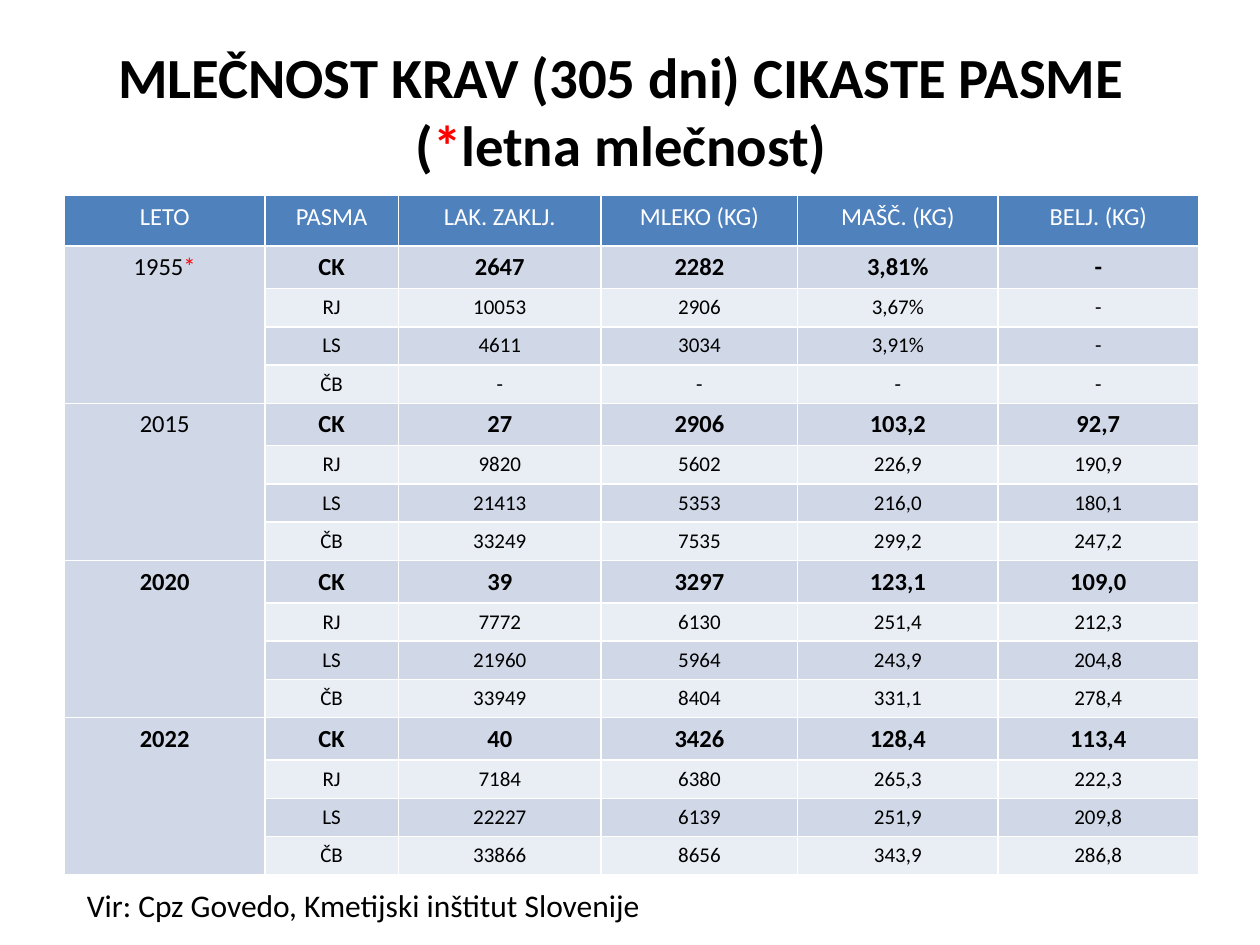
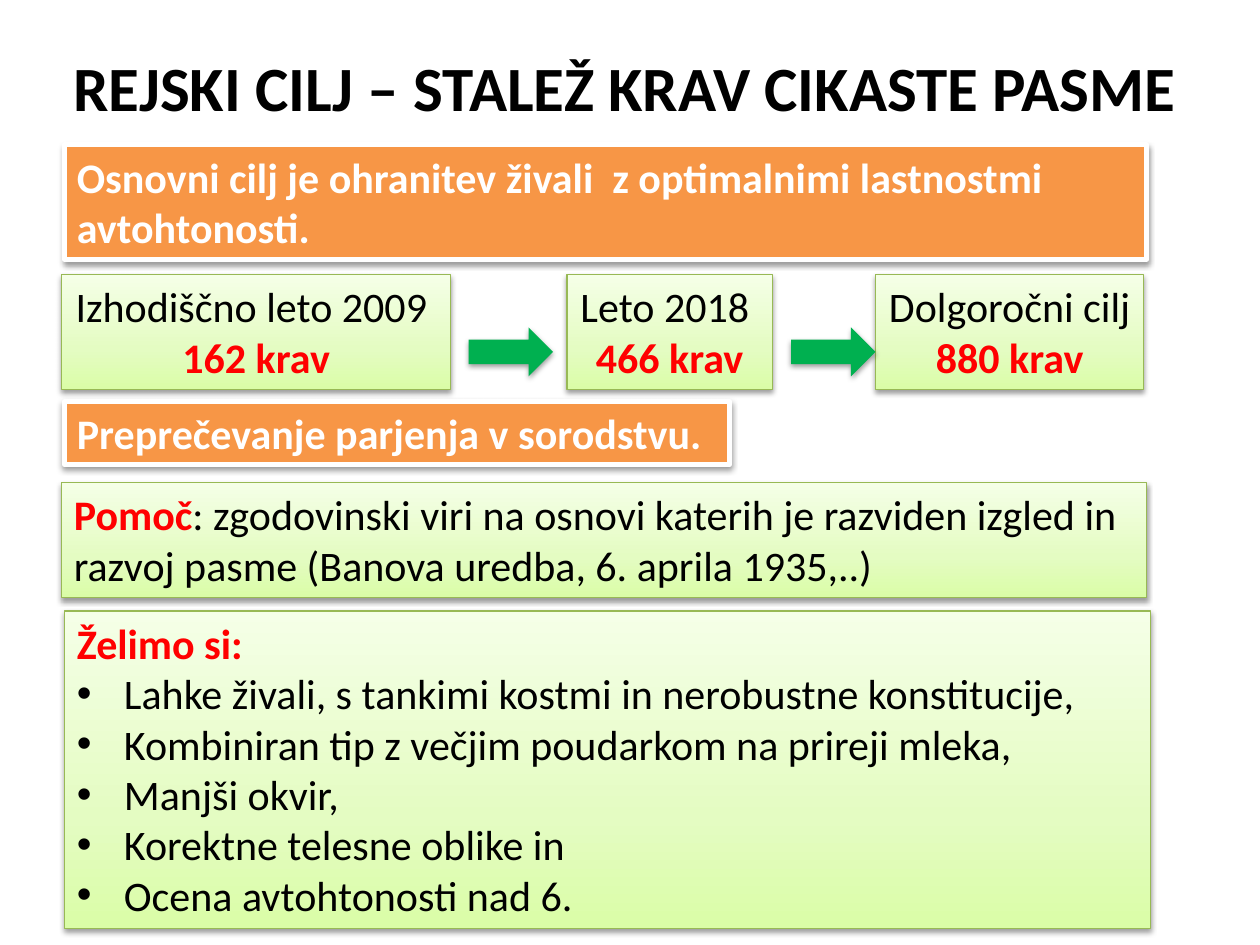
"""Build two slides on the milk yield and breeding goal of Cika cattle."""
from lxml.etree import SubElement
from pptx import Presentation
from pptx.dml.color import RGBColor
from pptx.enum.shapes import MSO_SHAPE as Shape
from pptx.enum.text import MSO_ANCHOR as Anchor, MSO_AUTO_SIZE as AutoSize, PP_ALIGN as Align
from pptx.oxml.ns import qn
from pptx.util import Cm, Pt

FONT = "Calibri"
BLACK, WHITE, RED = "000000", "FFFFFF", "FF0000"
ORANGE, GREEN, GREEN_EDGE = "F79646", "00B050", "98B955"
GREEN_FADE = [(0, "DAFDA7"), (35, "E4FCC2"), (100, "F5FFE7")]
HEADER_BLUE, BAND_DARK, BAND_LIGHT = "4F81BD", "D0D8E8", "E9EDF4"
BODY_SIZE = 24

COLUMNS = [("LETO", 4.04), ("PASMA", 2.69), ("LAK. ZAKLJ.", 4.09),
           ("MLEKO (KG)", 3.96), ("MAŠČ. (KG)", 4.04), ("BELJ. (KG)", 4.04)]
BREEDS = ["CK", "RJ", "LS", "ČB"]
YIELDS = [
    ([("1955", BLACK, False), ("*", RED, False)],
     ["2647 2282 3,81% -", "10053 2906 3,67% -", "4611 3034 3,91% -", "- - - -"]),
    ([("2015", BLACK, False)],
     ["27 2906 103,2 92,7", "9820 5602 226,9 190,9",
      "21413 5353 216,0 180,1", "33249 7535 299,2 247,2"]),
    ([("2020", BLACK, True)],
     ["39 3297 123,1 109,0", "7772 6130 251,4 212,3",
      "21960 5964 243,9 204,8", "33949 8404 331,1 278,4"]),
    ([("2022", BLACK, True)],
     ["40 3426 128,4 113,4", "7184 6380 265,3 222,3",
      "22227 6139 251,9 209,8", "33866 8656 343,9 286,8"]),
]
MILESTONES = [("Izhodiščno leto 2009 ", "162 krav", 1.24, 7.85),
              ("Leto 2018 ", "466 krav", 11.43, 4.14),
              ("Dolgoročni cilj", "880 krav", 17.65, 5.41)]
WISHES = ["Lahke živali, s tankimi kostmi in nerobustne konstitucije, ",
          "Kombiniran tip z večjim poudarkom na prireji mleka,",
          "Manjši okvir, ", "Korektne telesne oblike in", "Ocena avtohtonosti nad 6. "]


def rgb(hex_code):
    """Turn a hex string into a colour."""
    return RGBColor.from_string(hex_code)


def write(paragraph, pieces, size, align=Align.LEFT):
    """Write (text, colour, bold) pieces into a paragraph; None breaks the line."""
    paragraph.alignment = align
    for piece in pieces:
        if piece is None:
            paragraph.add_line_break()
            continue
        run = paragraph.add_run()
        run.text, colour, run.font.bold = piece
        run.font.name = FONT
        run.font.size = Pt(size)
        run.font.color.rgb = rgb(colour)


def add_titled_slide(deck, pieces, box, size, align):
    """Add a title-only slide and format its title."""
    slide = deck.slides.add_slide(deck.slide_layouts[5])
    title = slide.shapes.title
    title.left, title.top, title.width, title.height = map(Cm, box)
    title.text_frame.auto_size = AutoSize.NONE
    title.text_frame.vertical_anchor = Anchor.MIDDLE
    write(title.text_frame.paragraphs[0], pieces, size, align)
    return slide


def fill_cell(cell, pieces, size, colour):
    """Give a table cell its text and fill."""
    cell.fill.solid()
    cell.fill.fore_color.rgb = rgb(colour)
    write(cell.text_frame.paragraphs[0], pieces, size, Align.CENTER)


def add_yield_table(slide):
    """Add the table of yields by year and breed."""
    row_count = 1 + len(YIELDS) * len(BREEDS)
    table = slide.shapes.add_table(row_count, len(COLUMNS), Cm(1.3), Cm(3.94),
                                   Cm(22.86), Cm(13.5)).table
    table.rows[0].height = Cm(1.02)
    for index, (heading, width) in enumerate(COLUMNS):
        table.columns[index].width = Cm(width)
        fill_cell(table.cell(0, index), [(heading, WHITE, False)], 14, HEADER_BLUE)
    for group, (year, breed_yields) in enumerate(YIELDS):
        first = 1 + group * len(BREEDS)
        table.cell(first, 0).merge(table.cell(first + len(BREEDS) - 1, 0))
        fill_cell(table.cell(first, 0), year, 14, BAND_DARK)
        for offset, (breed, figures) in enumerate(zip(BREEDS, breed_yields)):
            row, is_cika = first + offset, offset == 0
            table.rows[row].height = Cm(0.84 if is_cika else 0.76)
            for column, value in enumerate([breed, *figures.split()], start=1):
                fill_cell(table.cell(row, column), [(value, BLACK, is_cika)],
                          14 if is_cika else 12, BAND_LIGHT if offset % 2 else BAND_DARK)


def add_source_note(slide, note):
    """Add the data source below the table."""
    frame = slide.shapes.add_textbox(Cm(1.5), Cm(17.73), Cm(11.79), Cm(1.02)).text_frame
    frame.word_wrap = False
    write(frame.paragraphs[0], [(note, BLACK, False)], 18)


def add_shadowed(slide, kind, box):
    """Add a preset shape with a soft shadow below it."""
    shape = slide.shapes.add_shape(kind, *map(Cm, box))
    shape.shadow.inherit = False
    effects = shape._element.spPr.find(qn("a:effectLst"))
    shadow = SubElement(effects, qn("a:outerShdw"), blurRad="40000", dist="20000",
                        dir="5400000", rotWithShape="0")
    black = SubElement(shadow, qn("a:srgbClr"), val=BLACK)
    SubElement(black, qn("a:alpha"), val="38000")
    return shape


def fade(shape, stops):
    """Fill a shape with a gradient rising from its lower edge."""
    shape.fill.gradient()
    shape.fill.gradient_angle = 90
    stop_list = next(shape._element.spPr.iter(qn("a:gsLst")))
    stop_list.clear()
    for percent, colour in stops:
        stop = SubElement(stop_list, qn("a:gs"), pos=str(percent * 1000))
        SubElement(stop, qn("a:srgbClr"), val=colour)


def add_panel(slide, box, lines, align=Align.LEFT, wrap=True, accent=False):
    """Add a green panel, or an orange one as accent, with lines of text."""
    panel = add_shadowed(slide, Shape.RECTANGLE, box)
    if accent:
        panel.fill.solid()
        panel.fill.fore_color.rgb = rgb(ORANGE)
    else:
        fade(panel, GREEN_FADE)
    panel.line.color.rgb = rgb(WHITE if accent else GREEN_EDGE)
    panel.line.width = Pt(3 if accent else 0.75)
    frame = panel.text_frame
    frame.word_wrap = wrap
    frame.auto_size = AutoSize.SHAPE_TO_FIT_TEXT
    frame.vertical_anchor = Anchor.TOP
    for index, pieces in enumerate(lines):
        paragraph = frame.add_paragraph() if index else frame.paragraphs[0]
        write(paragraph, pieces, BODY_SIZE, align)
    return panel


def add_bullet(paragraph):
    """Give a paragraph a round bullet and a hanging indent."""
    properties = paragraph._p.get_or_add_pPr()
    properties.set("marL", str(Cm(0.95)))
    properties.set("indent", str(-Cm(0.95)))
    SubElement(properties, qn("a:buFont"), typeface="Arial")
    SubElement(properties, qn("a:buChar"), char="•")


def add_arrow(slide, left):
    """Add a green arrow between two milestones."""
    arrow = add_shadowed(slide, Shape.RIGHT_ARROW, (left, 6.6, 1.7, 0.99))
    arrow.fill.solid()
    arrow.fill.fore_color.rgb = rgb(GREEN)
    arrow.line.fill.background()


def build_yield_slide(deck):
    """Build the slide on milk yield."""
    title = [("MLEČNOST KRAV (305 dni) CIKASTE PASME", BLACK, True), None,
             ("(", BLACK, True), ("*", RED, True), ("letna mlečnost)", BLACK, True)]
    slide = add_titled_slide(deck, title, (1.09, 0.91, 22.86, 2.59), 32.4, Align.CENTER)
    add_yield_table(slide)
    add_source_note(slide, "Vir: Cpz Govedo, Kmetijski inštitut Slovenije")


def build_goal_slide(deck):
    """Build the slide on the breeding goal."""
    title = [("REJSKI CILJ – STALEŽ KRAV CIKASTE PASME", BLACK, True)]
    slide = add_titled_slide(deck, title, (1.22, 0.74, 22.86, 2.01), 36, Align.LEFT)
    add_panel(slide, (1.3, 2.92, 21.82, 2.31),
              [[("Osnovni cilj je ohranitev živali  z optimalnimi lastnostmi avtohtonosti.",
                 WHITE, True)]], accent=True)
    add_panel(slide, (1.24, 9.73, 21.87, 2.31),
              [[("Pomoč", RED, True),
                (": zgodovinski viri na osnovi katerih je razviden izgled in razvoj pasme "
                 "(Banova uredba, 6. aprila 1935,..)", BLACK, False)]])
    add_panel(slide, (1.3, 8.1, 13.41, 1.27),
              [[("Preprečevanje parjenja v sorodstvu. ", WHITE, True)]],
              Align.JUSTIFY, wrap=False, accent=True)
    wish_lines = [[("Želimo si: ", RED, True)], *([(wish, BLACK, False)] for wish in WISHES)]
    wish_panel = add_panel(slide, (1.3, 12.32, 21.89, 6.4), wish_lines, Align.JUSTIFY)
    for paragraph in wish_panel.text_frame.paragraphs[1:]:
        add_bullet(paragraph)
    for period, herd, left, width in MILESTONES:
        add_panel(slide, (left, 5.54, width, 2.31),
                  [[(period, BLACK, False)], [(herd, RED, True)]], Align.CENTER, wrap=False)
    for left in (9.45, 15.95):
        add_arrow(slide, left)


def main():
    """Build and save the deck."""
    deck = Presentation()
    deck.slide_width, deck.slide_height = Cm(25.4), Cm(19.05)
    build_yield_slide(deck)
    build_goal_slide(deck)
    deck.save("out.pptx")


if __name__ == "__main__":
    main()
